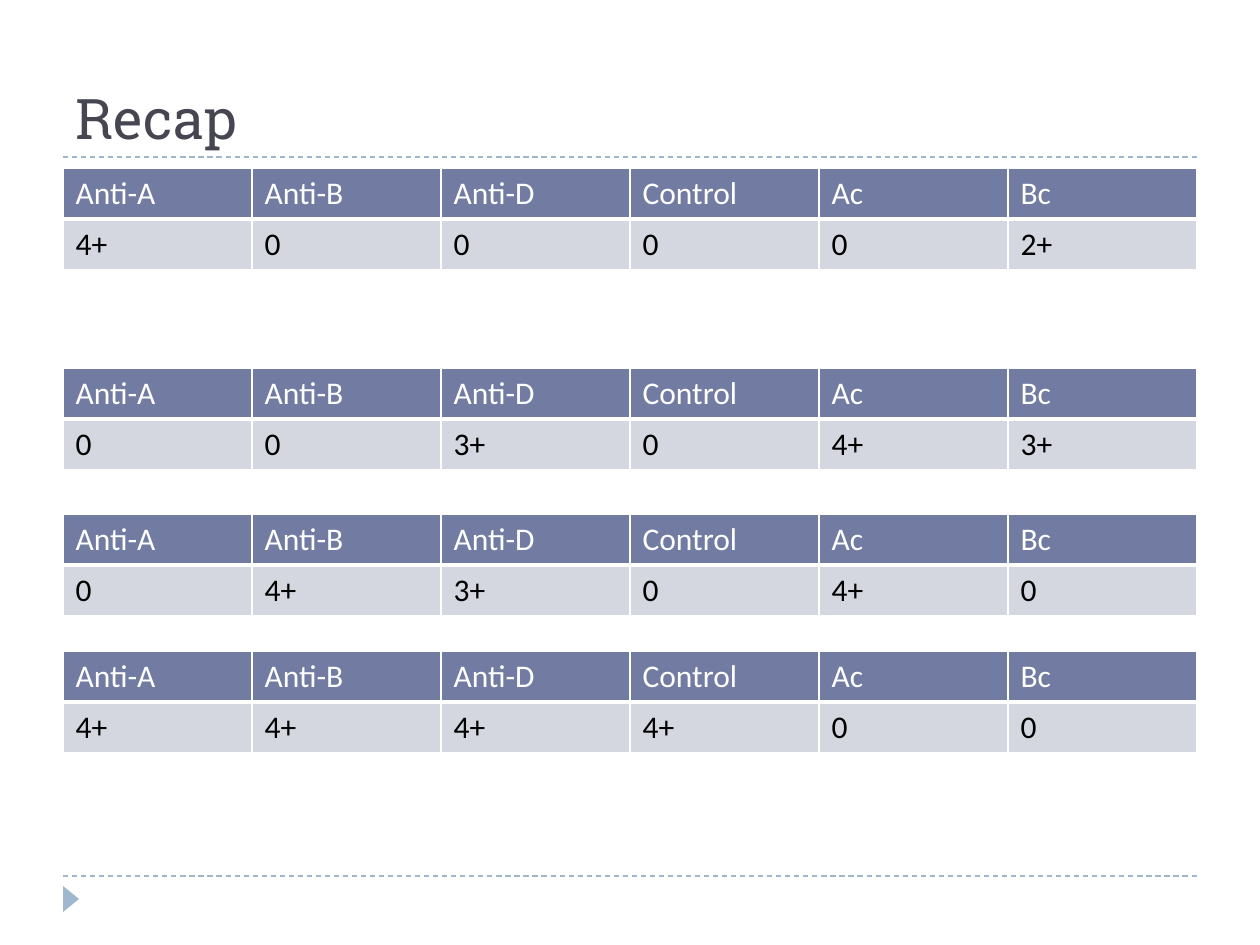
"""Build the Recap slide of four blood-grouping reaction tables."""
from dataclasses import dataclass

from lxml.etree import SubElement
from pptx import Presentation
from pptx.dml.color import RGBColor
from pptx.enum.dml import MSO_LINE
from pptx.enum.shapes import MSO_CONNECTOR, MSO_SHAPE
from pptx.enum.text import MSO_ANCHOR, PP_ALIGN
from pptx.oxml.ns import qn
from pptx.util import Emu, Pt

LEFT, WIDTH, ROW_H = 63, 1134, 51
HEADERS = ("Anti-A", "Anti-B", "Anti-D", "Control", "Ac", "Bc")
WHITE, BLACK, ACCENT = "FFFFFF", "000000", "9FB8CD"


@dataclass
class Reaction:
    top: int
    results: tuple[str, ...]


REACTIONS = (
    Reaction(168, ("4+", "0", "0", "0", "0", "2+")),
    Reaction(368, ("0", "0", "3+", "0", "4+", "3+")),
    Reaction(514, ("0", "4+", "3+", "0", "4+", "0")),
    Reaction(651, ("4+", "4+", "4+", "4+", "0", "0")),
)


def px(n: int) -> Emu:
    return Emu(round(n * 914400 / 126))


def rgb(color: str) -> RGBColor:
    return RGBColor.from_string(color)


def write(tf, text: str, *, size: int, font: str, color: str) -> None:
    p = tf.paragraphs[0]
    p.alignment = PP_ALIGN.LEFT
    r = p.add_run()
    r.text = text
    r.font.size = Pt(size)
    r.font.name = font
    r.font.bold = False
    r.font.color.rgb = rgb(color)


def add_border(cell, side: str, points: int) -> None:
    tc_pr = cell._tc.get_or_add_tcPr()
    ln = SubElement(tc_pr, qn(f"a:ln{side}"), w=str(Pt(points)))
    fill = SubElement(ln, qn("a:solidFill"))
    SubElement(fill, qn("a:srgbClr"), val=WHITE)


def add_row(row, texts: tuple[str, ...], *, fill: str, color: str, bottom: int) -> None:
    row.height = px(ROW_H)
    for cell, text in zip(row.cells, texts):
        for side, points in (("L", 1), ("R", 1), ("T", 1), ("B", bottom)):
            add_border(cell, side, points)
        cell.fill.solid()
        cell.fill.fore_color.rgb = rgb(fill)
        write(cell.text_frame, text, size=18, font="Calibri", color=color)


def add_reaction(s, reaction: Reaction) -> None:
    frame = s.shapes.add_table(2, len(HEADERS), px(LEFT), px(reaction.top),
                               px(WIDTH), px(2 * ROW_H))
    table = frame.table
    table.first_row = table.horz_banding = False
    for col in table.columns:
        col.width = px(WIDTH // len(HEADERS))
    add_row(table.rows[0], HEADERS, fill="727CA3", color=WHITE, bottom=3)
    add_row(table.rows[1], reaction.results, fill="D5D7E0", color=BLACK, bottom=1)


def add_rule(s, y: int) -> None:
    rule = s.shapes.add_connector(MSO_CONNECTOR.STRAIGHT, px(LEFT), px(y),
                                  px(LEFT + WIDTH), px(y))
    rule.line.color.rgb = rgb(ACCENT)
    rule.line.width = Pt(0.75)
    rule.line.dash_style = MSO_LINE.DASH
    SubElement(rule._element.spPr, qn("a:effectLst"))


def add_marker(s) -> None:
    sp = s.shapes.add_shape(MSO_SHAPE.ISOSCELES_TRIANGLE, px(58), px(891), px(26), px(16))
    sp.rotation = 90
    sp.shadow.inherit = False
    sp.fill.solid()
    sp.fill.fore_color.rgb = rgb(ACCENT)
    sp.line.fill.background()


def set_title(s, text: str) -> None:
    sp = s.shapes.title
    sp.left, sp.top, sp.width, sp.height = px(LEFT), px(21), px(WIDTH), px(136)
    sp.text_frame.vertical_anchor = MSO_ANCHOR.BOTTOM
    write(sp.text_frame, text, size=32, font="Roboto Slab", color="464653")


def main() -> None:
    prs = Presentation()
    prs.slide_width, prs.slide_height = px(1260), px(945)
    s = prs.slides.add_slide(prs.slide_layouts[5])
    for y in (876, 157):
        add_rule(s, y)
    add_marker(s)
    set_title(s, "Recap")
    for reaction in REACTIONS:
        add_reaction(s, reaction)
    prs.save("out.pptx")


if __name__ == "__main__":
    main()
